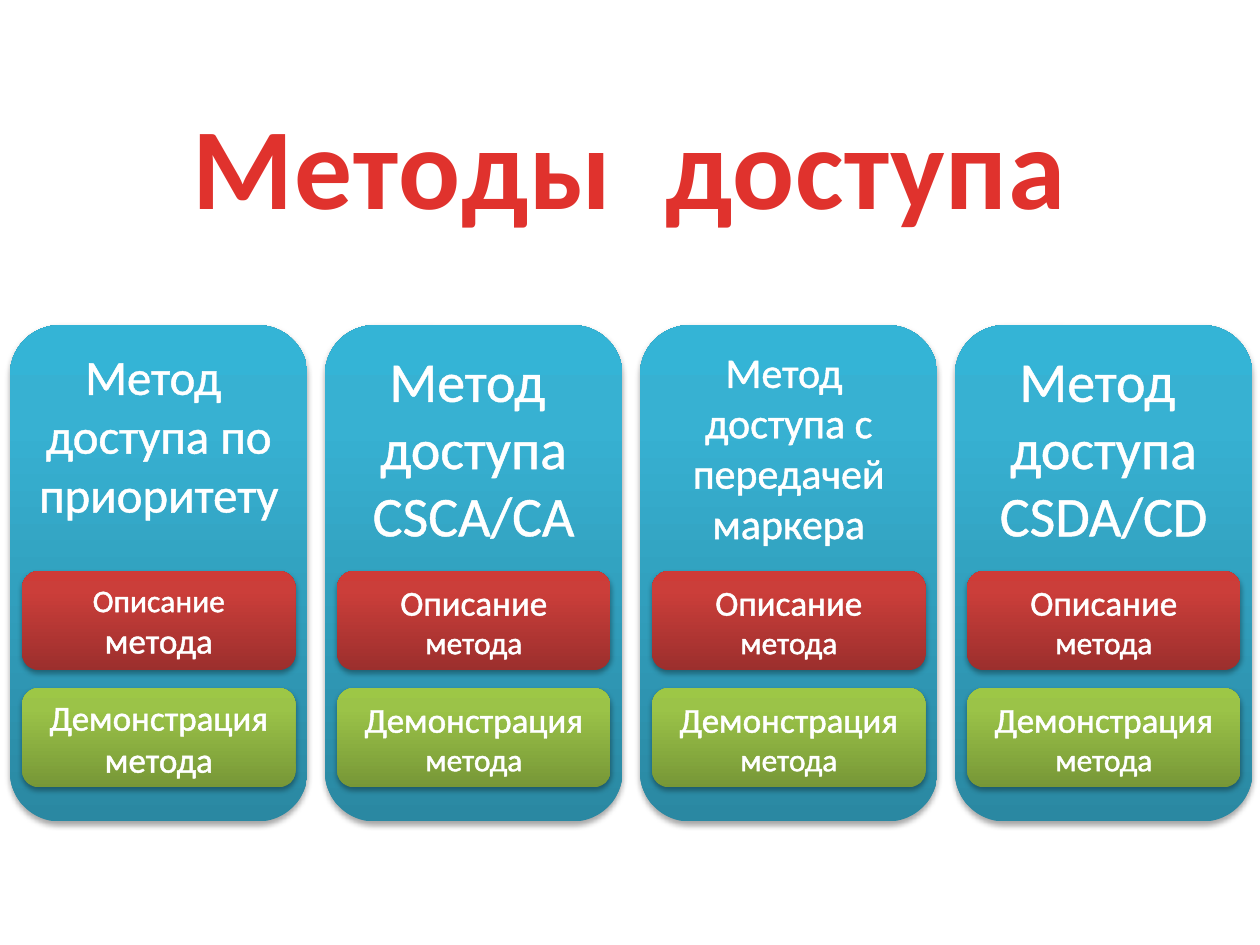
"""Build the access methods slide: a title above four method cards."""
from dataclasses import dataclass
from typing import NamedTuple

from lxml.etree import SubElement
from pptx import Presentation
from pptx.dml.color import RGBColor
from pptx.enum.shapes import MSO_SHAPE as Preset
from pptx.enum.text import MSO_ANCHOR as Anchor, MSO_AUTO_SIZE as AutoSize, PP_ALIGN as Align
from pptx.oxml import parse_xml
from pptx.oxml.ns import nsdecls, qn
from pptx.util import Pt


class Stop(NamedTuple):
    position: int
    color: str


class Piece(NamedTuple):
    text: str
    size: float


class Box(NamedTuple):
    left: float
    top: float
    width: float
    height: float


@dataclass(frozen=True)
class Theme:
    font: str = "Calibri"
    white: str = "FFFFFF"
    shadow: str = "000000"
    title_size: int = 66
    large: int = 20
    small: int = 18
    outline: float = 1.45
    blue: tuple = (Stop(0, "2A88A2"), Stop(80, "37B1D2"), Stop(100, "34B4D6"))
    red: tuple = (Stop(0, "9C2F2D"), Stop(80, "CB3E3A"), Stop(100, "CE3B37"))
    green: tuple = (Stop(0, "779737"), Stop(80, "9BC348"), Stop(100, "9DC746"))
    title: tuple = (Stop(25, "E0322D"), Stop(100, "A2201C"))


class Card(NamedTuple):
    heading: Piece
    description: tuple
    demonstration: tuple


THEME = Theme()
BIG, SMALL = THEME.large, THEME.small
DESCRIPTION = (Piece("Описание", BIG), Piece(" метода", SMALL))
DEMONSTRATION = (Piece("Демонстрация", BIG), Piece(" метода", SMALL))
CARDS = (
    Card(Piece("Метод  доступа по приоритету", 28),
         (Piece("Описание ", SMALL), Piece("метода", BIG)),
         (Piece("Демонстрация метода", BIG),)),
    Card(Piece("Метод  доступа CSCA/CA", 32), DESCRIPTION, DEMONSTRATION),
    Card(Piece("Метод  доступа с передачей маркера", 24), DESCRIPTION, DEMONSTRATION),
    Card(Piece("Метод  доступа CSDA/CD", 32), DESCRIPTION, DEMONSTRATION),
)
CARD_BOX = Box(5.7, 185.8, 170, 283.6)
CARD_PITCH = 180
BUTTON_BOX = Box(12.7, 326.3, 156.2, 56.7)
BUTTON_PITCH = 66.9


def apply_format(target: object, values: dict) -> None:
    """Set every attribute named in the format values."""
    for name, value in values.items():
        setattr(target, name, value)


def gradient(stops: tuple, angle: int):
    """Return a linear gradient fill element."""
    marks = "".join(
        f'<a:gs pos="{stop.position * 1000}"><a:srgbClr val="{stop.color}"/></a:gs>' for stop in stops
    )
    return parse_xml(
        f'<a:gradFill {nsdecls("a")} rotWithShape="1"><a:gsLst>{marks}</a:gsLst>'
        f'<a:lin ang="{angle * 60000}" scaled="0"/></a:gradFill>'
    )


def add_shadow(shape) -> None:
    """Give a shape a soft shadow that falls straight down."""
    shape.shadow.inherit = False
    effects = shape._element.spPr.find(qn("a:effectLst"))
    values = {"blurRad": Pt(3.15), "dist": Pt(1.81), "dir": 90 * 60000, "rotWithShape": 0}
    shadow = SubElement(effects, qn("a:outerShdw"), {name: str(value) for name, value in values.items()})
    color = SubElement(shadow, qn("a:srgbClr"), val=THEME.shadow)
    SubElement(color, qn("a:alpha"), val="35000")


def add_outline(run) -> None:
    """Draw a thin white line around the letters of a run."""
    line = parse_xml(
        f'<a:ln {nsdecls("a")} w="{Pt(THEME.outline)}"><a:solidFill>'
        f'<a:srgbClr val="{THEME.white}"/></a:solidFill></a:ln>'
    )
    run.font._element.insert(0, line)


def add_panel(slide, box: Box, stops: tuple, pieces: tuple, anchor: Anchor) -> None:
    """Add a rounded gradient panel with centred white text."""
    shape = slide.shapes.add_shape(Preset.ROUNDED_RECTANGLE, *map(Pt, box))
    shape._element.spPr.prstGeom.addnext(gradient(stops, 270))
    shape.line.fill.background()
    add_shadow(shape)
    apply_format(shape.text_frame, {"word_wrap": True, "vertical_anchor": anchor})
    paragraph = shape.text_frame.paragraphs[0]
    paragraph.alignment = Align.CENTER
    for piece in pieces:
        run = paragraph.add_run()
        run.text = piece.text
        apply_format(run.font, {"name": THEME.font, "size": Pt(piece.size)})
        run.font.color.rgb = RGBColor.from_string(THEME.white)
        add_outline(run)


def add_title(slide, text: str, box: Box) -> None:
    """Add the large centred title with gradient letters."""
    shape = slide.shapes.add_textbox(*map(Pt, box))
    apply_format(shape.text_frame, {"word_wrap": True, "auto_size": AutoSize.SHAPE_TO_FIT_TEXT})
    paragraph = shape.text_frame.paragraphs[0]
    paragraph.alignment = Align.CENTER
    run = paragraph.add_run()
    run.text = text
    apply_format(run.font, {"name": THEME.font, "size": Pt(THEME.title_size), "bold": True})
    run.font._element.set("spc", "50")
    run.font._element.insert(0, gradient(THEME.title, 90))


def add_card(slide, card: Card, offset: float) -> None:
    """Add one method card with its two buttons."""
    card_box = CARD_BOX._replace(left=CARD_BOX.left + offset)
    add_panel(slide, card_box, THEME.blue, (card.heading,), Anchor.TOP)
    buttons = ((THEME.red, card.description), (THEME.green, card.demonstration))
    for row, (stops, pieces) in enumerate(buttons):
        box = BUTTON_BOX._replace(left=BUTTON_BOX.left + offset, top=BUTTON_BOX.top + row * BUTTON_PITCH)
        add_panel(slide, box, stops, pieces, Anchor.MIDDLE)


def main() -> None:
    """Build and save the presentation."""
    presentation = Presentation()
    apply_format(presentation, {"slide_width": Pt(720), "slide_height": Pt(540)})
    slide = presentation.slides.add_slide(presentation.slide_layouts[6])
    add_title(slide, "Методы  доступа", Box(0, 50.4, 720, 87.2))
    for column, card in enumerate(CARDS):
        add_card(slide, card, column * CARD_PITCH)
    presentation.save("out.pptx")


if __name__ == "__main__":
    main()
